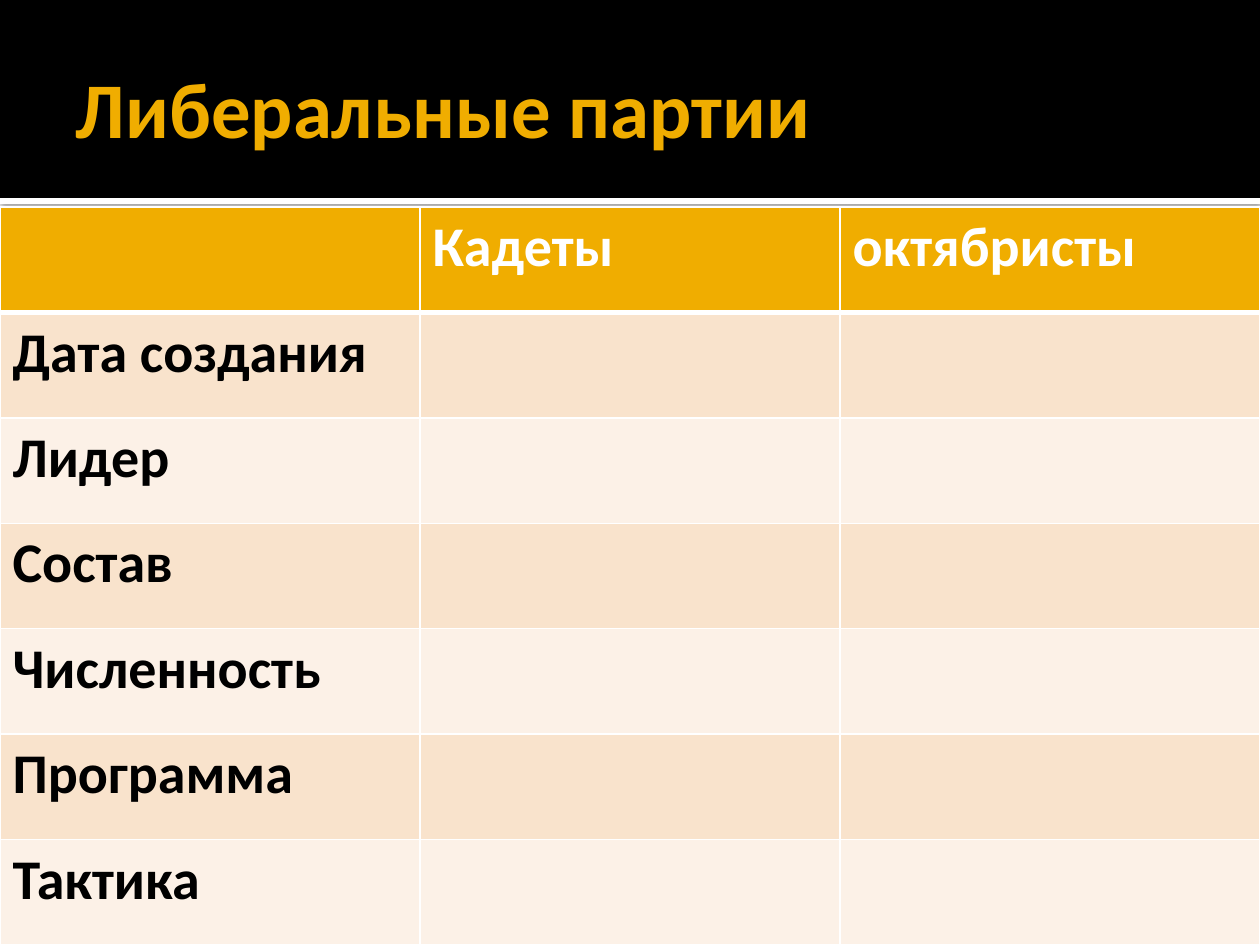
from collections import namedtuple
from dataclasses import dataclass

from lxml.etree import SubElement
from pptx import Presentation
from pptx.dml.color import RGBColor
from pptx.enum.shapes import MSO_SHAPE
from pptx.enum.text import MSO_ANCHOR, PP_ALIGN
from pptx.oxml.ns import qn
from pptx.util import Emu, Pt

Box = namedtuple("Box", "left top width height")


@dataclass(frozen=True)
class Theme:
    font: str = "Calibri"
    title_size: int = 45
    cell_size: int = 32
    accent: str = "F0AD00"
    black: str = "000000"
    white: str = "FFFFFF"
    bands: tuple = ("F9E3CC", "FCF1E7")
    grid_width: int = 1
    header_line_width: int = 3


THEME = Theme()
PX_PER_INCH = 126
PAGE = Box(0, 0, 1260, 945)
HEADER = Box(0, 0, 1260, 204)
GRID = Box(0, 207, 1260, 738)
RULE_HEIGHT = 6
ROWS = [
    ("", "Кадеты", "октябристы"),
    ("Дата создания", "", ""),
    ("Лидер", "", ""),
    ("Состав", "", ""),
    ("Численность", "", ""),
    ("Программа", "", ""),
    ("Тактика", "", ""),
]


def px(length):
    return Emu(round(length * 914400 / PX_PER_INCH))


def paint(fill, color):
    fill.solid()
    fill.fore_color.rgb = RGBColor.from_string(color)


def write(frame, text, *, size, color, bold=True, align=PP_ALIGN.LEFT):
    para = frame.paragraphs[0]
    para.alignment = align
    span = para.add_run()
    span.text = text
    span.font.name = THEME.font
    span.font.size = Pt(size)
    span.font.bold = bold
    span.font.color.rgb = RGBColor.from_string(color)


def add_bar(page, box, color):
    bar = page.shapes.add_shape(MSO_SHAPE.RECTANGLE, *map(px, box))
    bar.shadow.inherit = False
    paint(bar.fill, color)
    bar.line.fill.background()
    return bar


def add_shadow(shape, *, color, opacity, blur, distance, angle):
    effects = shape.element.spPr.find(qn("a:effectLst"))
    shadow = SubElement(
        effects, qn("a:outerShdw"), blurRad=str(Pt(blur)), dist=str(Pt(distance)),
        dir=str(angle * 60000), algn="t", rotWithShape="0",
    )
    tint = SubElement(shadow, qn("a:srgbClr"), val=color)
    SubElement(tint, qn("a:alpha"), val=str(opacity * 1000))


def add_header(page, box, text):
    band_height = box.height - RULE_HEIGHT
    rule = add_bar(page, Box(box.left, box.top + band_height, box.width, RULE_HEIGHT), THEME.white)
    add_shadow(rule, color=THEME.black, opacity=60, blur=2.5, distance=0.8, angle=90)
    band = add_bar(page, box._replace(height=band_height), THEME.black)

    title = page.shapes.title
    for bar in (rule, band):
        title.element.addprevious(bar.element)
    title.left, title.top = px(box.left + 63), px(box.top + 21)
    title.width, title.height = px(box.width - 126), px(173)
    frame = title.text_frame
    frame.word_wrap = True
    frame.vertical_anchor = MSO_ANCHOR.MIDDLE
    frame.margin_left = px(13)
    frame.margin_top = frame.margin_right = frame.margin_bottom = px(6)
    write(frame, text, size=THEME.title_size, color=THEME.accent)


def add_borders(cell, widths):
    properties = cell._tc.get_or_add_tcPr()
    for position, (side, width) in enumerate(widths.items()):
        line = SubElement(properties, qn(f"a:ln{side}"), w=str(Pt(width)))
        properties.insert(position, line)
        fill = SubElement(line, qn("a:solidFill"))
        SubElement(fill, qn("a:srgbClr"), val=THEME.white)


def add_grid(page, box, rows):
    table = page.shapes.add_table(len(rows), len(rows[0]), *map(px, box)).table
    for column in table.columns:
        column.width = px(box.width / len(rows[0]))
    for row in table.rows:
        row.height = px(box.height / len(rows))
    for row_index, texts in enumerate(rows):
        is_header = row_index == 0
        background = THEME.accent if is_header else THEME.bands[(row_index - 1) % 2]
        widths = dict.fromkeys("LRTB", THEME.grid_width)
        if is_header:
            widths["B"] = THEME.header_line_width
        elif row_index == 1:
            widths["T"] = THEME.header_line_width
        for column_index, text in enumerate(texts):
            cell = table.cell(row_index, column_index)
            paint(cell.fill, background)
            add_borders(cell, widths)
            if text:
                color = THEME.white if is_header else THEME.black
                write(cell.text_frame, text, size=THEME.cell_size, color=color)


def main():
    deck = Presentation()
    deck.slide_width, deck.slide_height = px(PAGE.width), px(PAGE.height)
    page = deck.slides.add_slide(deck.slide_layouts[5])
    paint(page.background.fill, THEME.white)
    add_header(page, HEADER, "Либеральные партии")
    add_grid(page, GRID, ROWS)
    deck.save("out.pptx")


if __name__ == "__main__":
    main()
